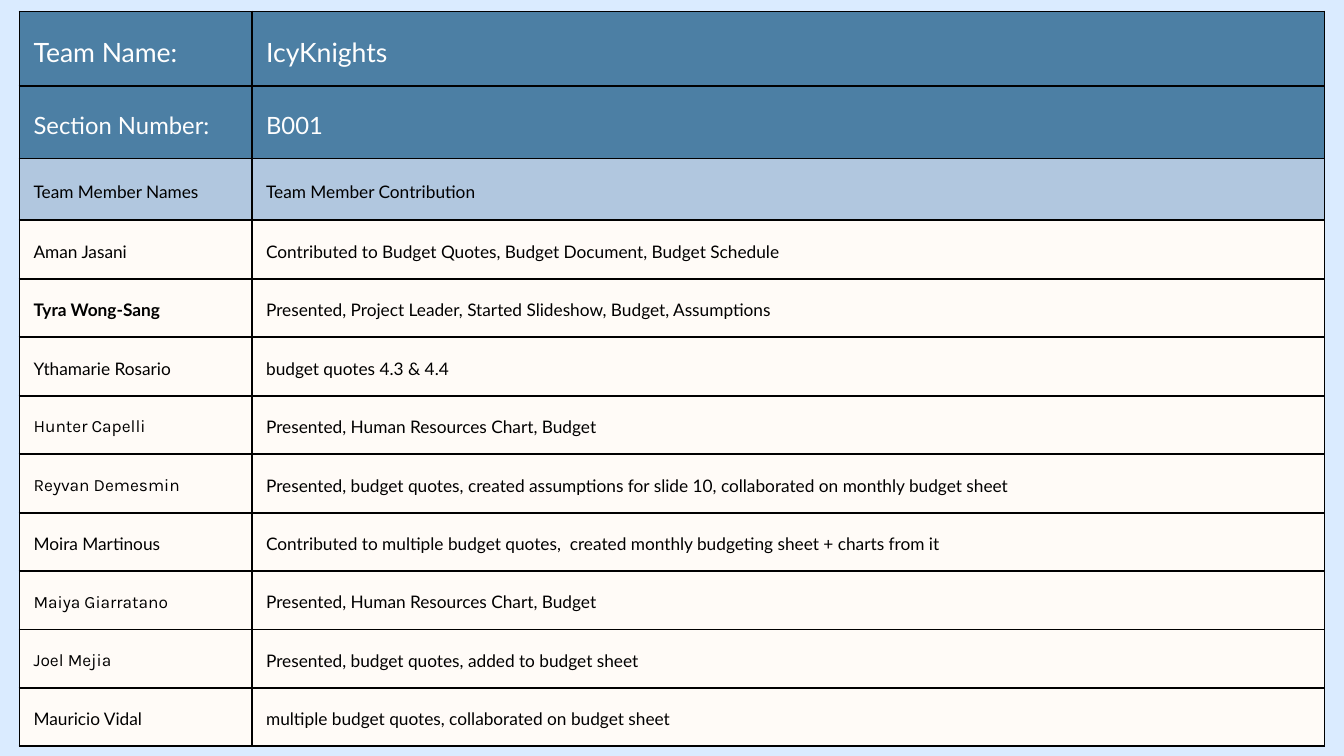
from lxml.etree import SubElement
from pptx import Presentation
from pptx.dml.color import RGBColor
from pptx.enum.text import MSO_ANCHOR
from pptx.oxml.ns import qn
from pptx.util import Inches, Pt

SKY = RGBColor(0xDA, 0xEB, 0xFF)
STEEL = RGBColor(0x4C, 0x7F, 0xA4)
PALE_BLUE = RGBColor(0xB1, 0xC7, 0xDF)
CREAM = RGBColor(0xFF, 0xFB, 0xF7)
WHITE = RGBColor(0xFE, 0xFE, 0xFE)
BLACK = RGBColor(0, 0, 0)

COLUMN_WIDTHS = (3.46, 15.96)
PADDING = Inches(0.21)
BORDER = Pt(2.25)
LEADER = "Tyra Wong-Sang"

HEADINGS = [
    ("Team Name:", "IcyKnights", 1.11, STEEL, WHITE, 28.5, 40.6),
    ("Section Number:", "B001", 1.08, STEEL, WHITE, 25.5, 36.4),
    ("Team Member Names", "Team Member Contribution", 0.92, PALE_BLUE, BLACK, 18.5, 26.6),
]
MEMBER_STYLE = (0.87, CREAM, BLACK, 18.5, 26.6)
MEMBERS = [
    ("Aman Jasani", "Contributed to Budget Quotes, Budget Document, Budget Schedule", "Lato"),
    (LEADER, "Presented, Project Leader, Started Slideshow, Budget, Assumptions", "Lato"),
    ("Ythamarie Rosario", "budget quotes 4.3 & 4.4", "Lato"),
    ("Hunter Capelli", "Presented, Human Resources Chart, Budget", "Karla"),
    ("Reyvan Demesmin", "Presented, budget quotes, created assumptions for slide 10, "
     "collaborated on monthly budget sheet", "Karla"),
    ("Moira Martinous", "Contributed to multiple budget quotes,  created monthly "
     "budgeting sheet + charts from it", "Lato"),
    ("Maiya Giarratano", "Presented, Human Resources Chart, Budget", "Karla"),
    ("Joel Mejia", "Presented, budget quotes, added to budget sheet", "Karla"),
    ("Mauricio Vidal", "multiple budget quotes, collaborated on budget sheet", "Lato"),
]


def add_borders(cell):
    """Draw a solid black line on all four sides of a cell."""
    properties = cell._tc.get_or_add_tcPr()
    for side in ("a:lnL", "a:lnR", "a:lnT", "a:lnB"):
        line = SubElement(properties, qn(side), w=str(BORDER))
        SubElement(SubElement(line, qn("a:solidFill")), qn("a:srgbClr"), val=str(BLACK))


def fill_cell(cell, text, face, fill, color, size, spacing):
    """Write and format one cell."""
    add_borders(cell)
    cell.fill.solid()
    cell.fill.fore_color.rgb = fill
    cell.vertical_anchor = MSO_ANCHOR.MIDDLE
    cell.margin_left = cell.margin_right = PADDING
    cell.margin_top = cell.margin_bottom = PADDING
    cell.text_frame.text = text
    paragraph = cell.text_frame.paragraphs[0]
    paragraph.line_spacing = Pt(spacing)
    font = paragraph.runs[0].font
    font.name, font.size, font.bold = face, Pt(size), text == LEADER
    font.color.rgb = color


def add_team_table(slide, left, top, width, height):
    """Place the table of team details and member contributions."""
    rows = [(name, value, "Lato", *style) for name, value, *style in HEADINGS]
    rows += [(*member, *MEMBER_STYLE) for member in MEMBERS]
    table = slide.shapes.add_table(len(rows), 2, left, top, width, height).table
    for column, column_width in zip(table.columns, COLUMN_WIDTHS):
        column.width = Inches(column_width)
    for row, (label, detail, label_face, row_height, *style) in zip(table.rows, rows):
        row.height = Inches(row_height)
        fill_cell(row.cells[0], label, label_face, *style)
        fill_cell(row.cells[1], detail, "Lato", *style)


def main():
    """Build and save the team slide."""
    presentation = Presentation()
    presentation.slide_width = Inches(20)
    presentation.slide_height = Inches(11.25)
    slide = presentation.slides.add_slide(presentation.slide_layouts[6])
    slide.background.fill.solid()
    slide.background.fill.fore_color.rgb = SKY
    add_team_table(slide, Inches(0.29), Inches(0.17), Inches(19.42), Inches(10.91))
    presentation.save("out.pptx")


if __name__ == "__main__":
    main()
